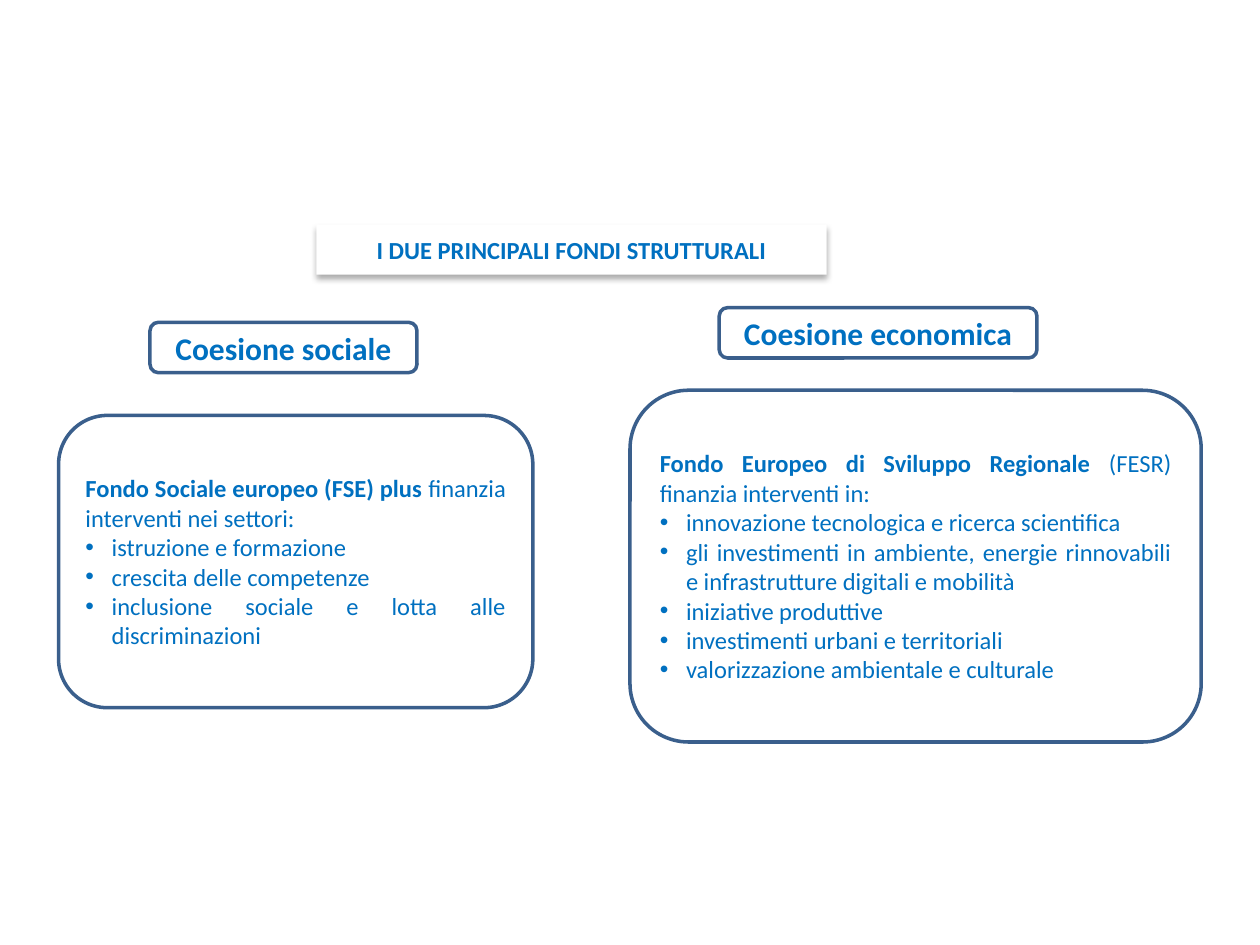
from lxml.etree import SubElement
from pptx import Presentation
from pptx.dml.color import RGBColor
from pptx.enum.shapes import MSO_SHAPE as Preset
from pptx.enum.text import MSO_ANCHOR as Anchor, MSO_AUTO_SIZE as AutoSize, PP_ALIGN as Align
from pptx.oxml.ns import qn
from pptx.util import Pt

FONT = "Calibri"
TEXT = "0070C0"
OUTLINE = "3A5F8C"
WHITE = "FFFFFF"
INDENT = 15

SOCIAL_FUND = [
    "istruzione e formazione",
    "crescita delle competenze",
    "inclusione sociale e lotta alle discriminazioni",
]
REGIONAL_FUND = [
    "innovazione tecnologica e ricerca scientifica",
    "gli investimenti in ambiente, energie rinnovabili e infrastrutture digitali e mobilità",
    "iniziative produttive",
    "investimenti urbani e territoriali",
    "valorizzazione ambientale e culturale",
]


def color(value):
    return RGBColor.from_string(value)


def style_box(shape, outlined=True):
    """White fill, optional outline, vertically centred wrapped text."""
    shape.fill.solid()
    shape.fill.fore_color.rgb = color(WHITE)
    if outlined:
        shape.line.color.rgb = color(OUTLINE)
        shape.line.width = Pt(2)
    else:
        shape.line.fill.background()
    frame = shape.text_frame
    frame.word_wrap = True
    frame.auto_size = AutoSize.NONE
    frame.vertical_anchor = Anchor.MIDDLE


def round_placeholder(placeholder, left, top, width, height):
    """Move a placeholder and give it rounded corners."""
    placeholder.left, placeholder.top = Pt(left), Pt(top)
    placeholder.width, placeholder.height = Pt(width), Pt(height)
    geometry = SubElement(placeholder._element.spPr, qn("a:prstGeom"), prst="roundRect")
    SubElement(geometry, qn("a:avLst"))


def add_run(paragraph, text, size=14, bold=False):
    run = paragraph.add_run()
    run.text = text
    run.font.name = FONT
    run.font.size = Pt(size)
    run.font.bold = bold
    run.font.color.rgb = color(TEXT)


def format_list_paragraph(paragraph, bulleted):
    properties = paragraph._p.get_or_add_pPr()
    indent = Pt(INDENT) if bulleted else 0
    properties.set("marL", str(indent))
    properties.set("indent", str(-indent))
    if bulleted:
        SubElement(properties, qn("a:buFont"), typeface="Arial")
        SubElement(properties, qn("a:buChar"), char="•")
    else:
        SubElement(properties, qn("a:buNone"))
    paragraph.alignment = Align.JUSTIFY
    paragraph.space_before = Pt(0)


def add_shadow(shape):
    effects = SubElement(shape._element.spPr, qn("a:effectLst"))
    shadow = SubElement(effects, qn("a:outerShdw"), blurRad=str(Pt(3.5)),
                        dist=str(Pt(2.2)), dir="5400000", rotWithShape="0")
    shade = SubElement(shadow, qn("a:srgbClr"), val="000000")
    SubElement(shade, qn("a:alpha"), val="32000")


def fill_title(title, text, *bounds):
    round_placeholder(title, *bounds)
    style_box(title, outlined=False)
    add_shadow(title)
    paragraph = title.text_frame.paragraphs[0]
    paragraph.alignment = Align.CENTER
    add_run(paragraph, text, bold=True)


def fill_fund(body, name, introduction, items, *bounds):
    round_placeholder(body, *bounds)
    style_box(body)
    frame = body.text_frame
    opening = frame.paragraphs[0]
    format_list_paragraph(opening, bulleted=False)
    add_run(opening, name, bold=True)
    add_run(opening, introduction)
    for item in items:
        paragraph = frame.add_paragraph()
        format_list_paragraph(paragraph, bulleted=True)
        add_run(paragraph, item)


def add_label(slide, text, left, top, width, height=28.8):
    label = slide.shapes.add_shape(Preset.ROUNDED_RECTANGLE, Pt(left), Pt(top),
                                   Pt(width), Pt(height))
    label.shadow.inherit = False
    style_box(label)
    paragraph = label.text_frame.paragraphs[0]
    paragraph.alignment = Align.CENTER
    add_run(paragraph, text, size=18, bold=True)


def main():
    presentation = Presentation()
    presentation.slide_width, presentation.slide_height = Pt(720), Pt(540)
    # Layout with a title and two bodies
    slide = presentation.slides.add_slide(presentation.slide_layouts[3])
    title, social, regional = slide.placeholders

    # Heading
    fill_title(title, "I DUE PRINCIPALI FONDI STRUTTURALI", 180.8, 128.2, 291.6, 28.8)

    # The two funds
    fill_fund(social, "Fondo Sociale europeo (FSE) plus ", "finanzia interventi nei settori:",
              SOCIAL_FUND, 33.5, 237.4, 271, 167)
    fill_fund(regional, "Fondo Europeo di Sviluppo Regionale ", "(FESR) finanzia interventi in:",
              REGIONAL_FUND, 360, 223, 326.4, 201)

    # Labels above the funds
    add_label(slide, "Coesione sociale", 85.7, 184.2, 152.6)
    add_label(slide, "Coesione economica", 411, 175.8, 181.6)

    presentation.save("out.pptx")


if __name__ == "__main__":
    main()
